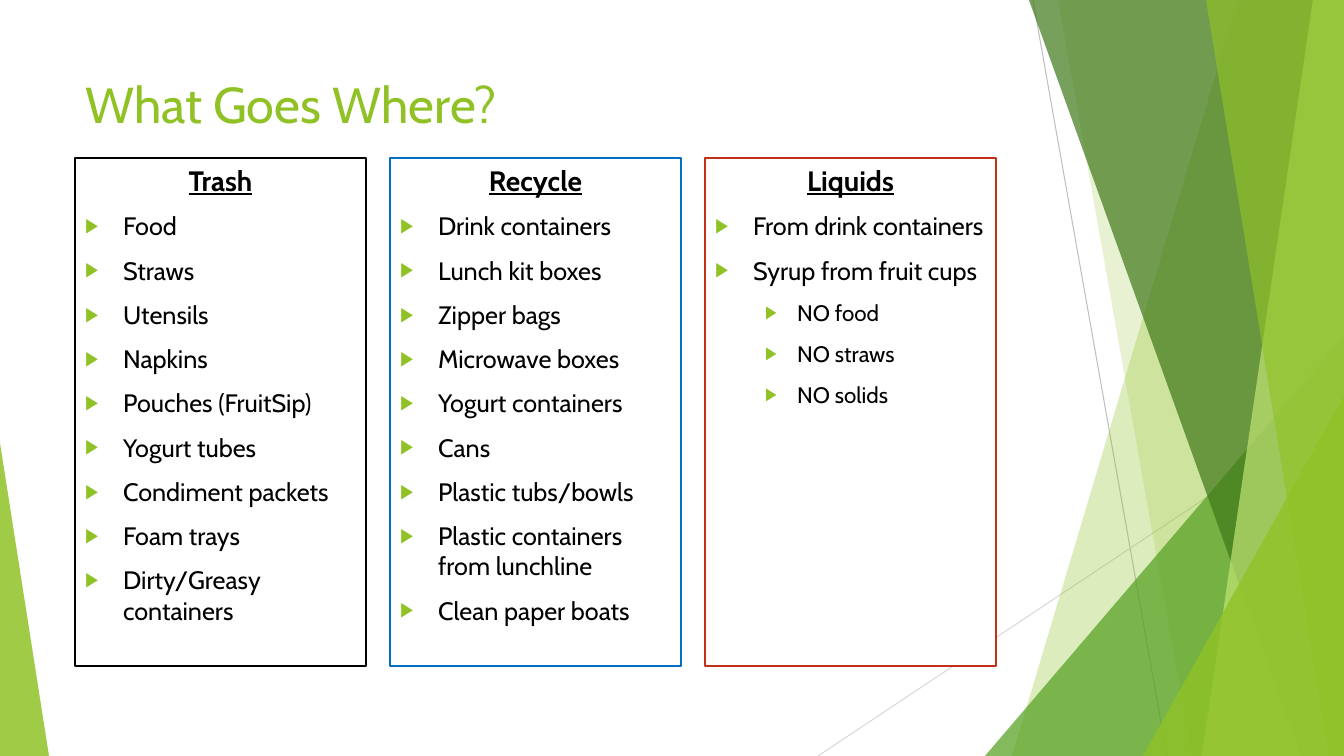
"""Builds a slide that sorts lunch waste into trash, recycling and liquids."""
from dataclasses import dataclass

from lxml import etree
from pptx import Presentation
from pptx import util as u
from pptx.dml.color import RGBColor
from pptx.enum import shapes, text
from pptx.oxml import ns

PX = 914400 / 100.8
W, H = 1344, 756


@dataclass(frozen=True)
class Theme:
    """Colours, font and type sizes of the slide."""
    font: str = "Cabin"
    green: str = "90C226"
    leaf: str = "54A021"
    forest: str = "3F7819"
    lime: str = "C0E474"
    ink: str = "000000"
    blue: str = "0070C0"
    red: str = "C42F1A"
    paper: str = "FFFFFF"
    title: int = 36
    head: int = 20
    items: tuple = (18, 16)


T = Theme()
INDENTS = ((38, -38), (82, -32))
RAYS = [((1033, 0), (1167, H), "BFBFBF"), ((W, 406), (818, H), "D9D9D9")]
SHARDS = [
    ("wedge", (1238, 1012), T.green, 30),
    ("wedge", (1058, 1192), T.green, 20),
    ("triangle", (985, 336, 359, 420, 1), T.leaf, 72),
    ("wedge", (1029, 1301), T.forest, 70),
    ("wedge", (1313, 1202), T.lime, 70),
    ("wedge", (1206, 1329), T.green, 65),
    ("triangle", (1143, 396, 201, 360, 1), T.green, 80),
    ("triangle", (0, 443, 49, 313, 0), T.green, 85),
]
BINS = [
    ("Trash", T.ink, [
        ("Food", 0), ("Straws", 0), ("Utensils", 0), ("Napkins", 0),
        ("Pouches (FruitSip)", 0), ("Yogurt tubes", 0),
        ("Condiment packets", 0), ("Foam trays", 0),
        ("Dirty/Greasy containers", 0)]),
    ("Recycle", T.blue, [
        ("Drink containers", 0), ("Lunch kit boxes", 0), ("Zipper bags", 0),
        ("Microwave boxes", 0), ("Yogurt containers", 0), ("Cans", 0),
        ("Plastic tubs/bowls", 0), ("Plastic containers from lunchline", 0),
        ("Clean paper boats", 0)]),
    ("Liquids", T.red, [
        ("From drink containers", 0), ("Syrup from fruit cups", 0),
        ("NO food", 1), ("NO straws", 1), ("NO solids", 1)]),
]


def px(n):
    """Turn a length in px into EMU."""
    return u.Emu(round(n * PX))


def rgb(c):
    """Turn a hex string into a colour."""
    return RGBColor.from_string(c)


def place(sp, box):
    """Move a shape to a box of left, top, width and height."""
    sp.left, sp.top, sp.width, sp.height = map(px, box)


def sub(parent, tag, **attrs):
    """Append a DrawingML element."""
    return etree.SubElement(parent, ns.qn(tag), **attrs)


def glaze(sp, color, alpha):
    """Fill a shape with a see-through colour and no outline."""
    sp.shadow.inherit = False
    sp.fill.solid()
    sp.fill.fore_color.rgb = rgb(color)
    clr = sp.element.spPr.find(".//" + ns.qn("a:srgbClr"))
    sub(clr, "a:alpha", val=str(alpha * 1000))
    sp.line.fill.background()


def add_backdrop(s):
    """Group the rays and shards behind everything else."""
    grp = s.shapes.add_group_shape()
    for start, end, color in RAYS:
        ray = grp.shapes.add_connector(
            shapes.MSO_CONNECTOR.STRAIGHT, *map(px, start + end))
        ray.line.color.rgb = rgb(color)
        ray.line.width = u.Pt(0.75)
        sub(ray._element.spPr, "a:effectLst")
    for kind, dims, color, alpha in SHARDS:
        if kind == "wedge":
            top, bottom = dims
            fb = grp.shapes.build_freeform(top, 0, scale=PX)
            fb.add_line_segments([(W, 0), (W, H), (bottom, H)], close=True)
            sp = fb.convert_to_shape()
        else:
            sp = grp.shapes.add_shape(
                shapes.MSO_SHAPE.ISOSCELES_TRIANGLE, *map(px, dims[:4]))
            sp.adjustments[0] = dims[4]
        glaze(sp, color, alpha)
    s.shapes._spTree.insert(2, grp._element)


def add_run(p, words, size, color, strong=False):
    """Add one run of formatted text."""
    r = p.add_run()
    r.text = words
    f = r.font
    f.name, f.size, f.bold, f.underline = T.font, u.Pt(size), strong, strong
    f.color.rgb = rgb(color)


def set_indent(p, left, hang):
    """Set the left margin and first-line indent, and return the properties."""
    pPr = p._p.get_or_add_pPr()
    pPr.set("marL", str(px(left)))
    pPr.set("indent", str(px(hang)))
    return pPr


def prepare(sp, box):
    """Place a placeholder and return its top-anchored text frame."""
    place(sp, box)
    tf = sp.text_frame
    tf.word_wrap = True
    tf.auto_size = text.MSO_AUTO_SIZE.NONE
    tf.vertical_anchor = text.MSO_ANCHOR.TOP
    return tf


def add_title(sp, box, words):
    """Write the slide title."""
    p = prepare(sp, box).paragraphs[0]
    p.alignment = text.PP_ALIGN.LEFT
    add_run(p, words, T.title, T.green)


def add_bin(sp, box, head, color, items):
    """Write one outlined column with a heading and bullets."""
    tf = prepare(sp, box)
    sp.fill.solid()
    sp.fill.fore_color.rgb = rgb(T.paper)
    sp.line.color.rgb = rgb(color)
    sp.line.width = u.Pt(1.5)
    p = tf.paragraphs[0]
    p.alignment = text.PP_ALIGN.CENTER
    p.space_before = u.Pt(0)
    sub(set_indent(p, 0, 0), "a:buNone")
    add_run(p, head, T.head, T.ink, strong=True)
    for words, level in items:
        p = tf.add_paragraph()
        p.level = level
        p.alignment = text.PP_ALIGN.LEFT
        p.space_before = u.Pt(10)
        pPr = set_indent(p, *INDENTS[level])
        sub(sub(pPr, "a:buClr"), "a:srgbClr", val=T.green)
        sub(pPr, "a:buSzPct", val="80000")
        sub(pPr, "a:buFont", typeface="Arial")
        sub(pPr, "a:buChar", char="▶")
        add_run(p, words, T.items[level], T.ink)


def main():
    """Build and save the slide."""
    prs = Presentation()
    prs.slide_width, prs.slide_height = px(W), px(H)
    s = prs.slides.add_slide(prs.slide_layouts.get_by_name("Comparison"))
    add_backdrop(s)
    title, *bodies = s.placeholders
    add_title(title, (75, 68, 948, 145), "What Goes Where?")
    for i, (sp, column) in enumerate(zip(bodies, BINS)):
        add_bin(sp, (75 + 315 * i, 158, 291, 508), *column)
    for sp in bodies[len(BINS):]:
        sp.element.getparent().remove(sp.element)
    prs.save("out.pptx")


if __name__ == "__main__":
    main()
